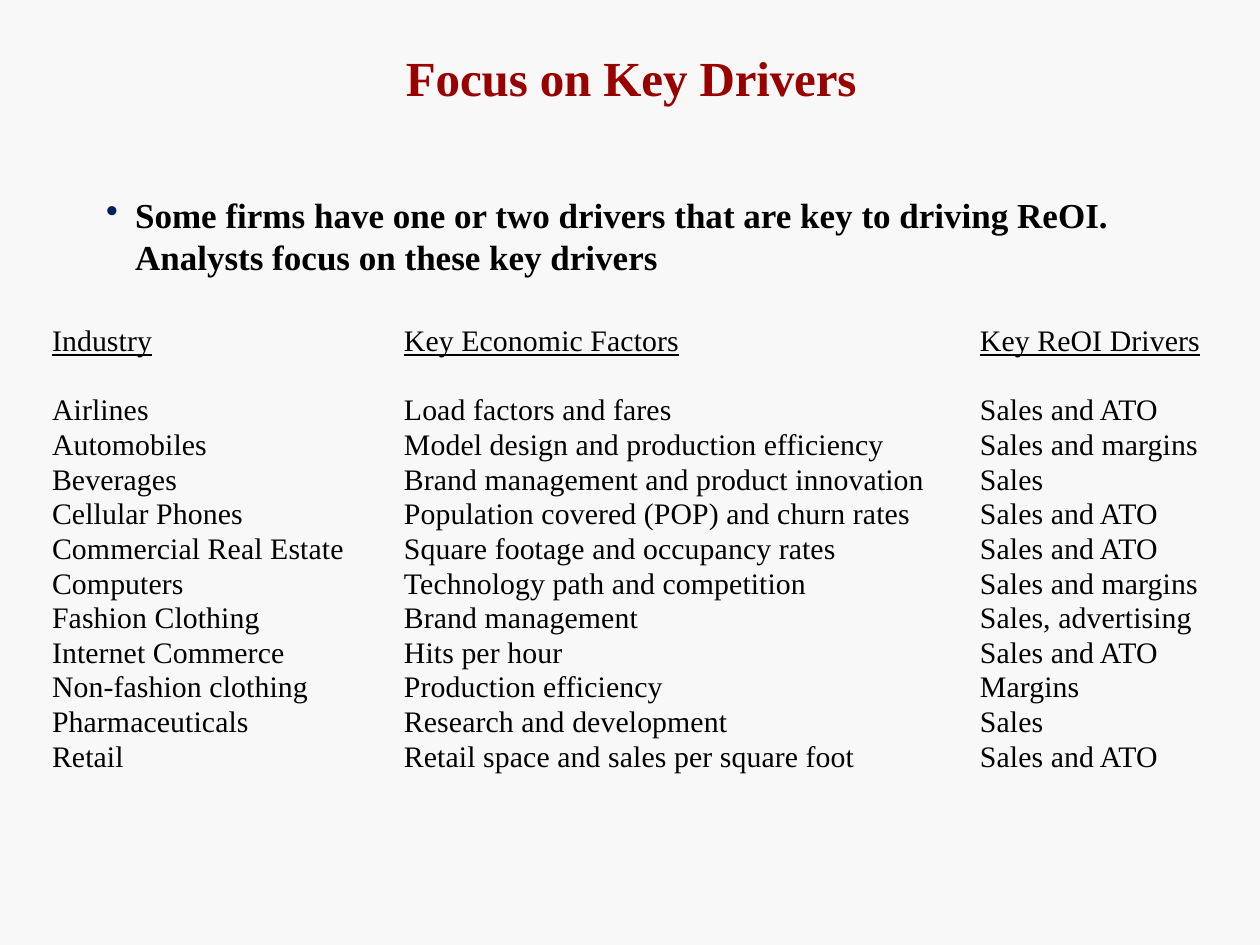
"""Build the slide on key drivers by industry."""
from typing import NamedTuple

from lxml.etree import SubElement
from pptx import Presentation
from pptx.dml.color import RGBColor
from pptx.oxml.ns import qn
from pptx.util import Emu, Pt

EMU_PER_PX = 914400 / 126
FONT = "Times New Roman"
PAPER = RGBColor(0xF8, 0xF8, 0xF8)
RED = RGBColor(0x99, 0x00, 0x00)
BLACK = RGBColor(0x00, 0x00, 0x00)
NAVY = RGBColor(0x00, 0x1F, 0x5F)
NO_GRID_STYLE = "{2D5ABB26-0587-4C30-8999-92F81FD0307C}"


class Box(NamedTuple):
    left: int
    top: int
    width: int
    height: int


class TextStyle(NamedTuple):
    size: int
    color: RGBColor
    bold: bool = False
    underline: bool = False
    spacing: int = 0


class Row(NamedTuple):
    industry: str
    factors: str
    drivers: str


TITLE_STYLE = TextStyle(28, RED, bold=True, spacing=-5)
POINT_STYLE = TextStyle(20, BLACK, bold=True)
HEADER_STYLE = TextStyle(17, BLACK, underline=True, spacing=5)
BODY_STYLE = TextStyle(17, BLACK, spacing=5)

ROWS = [
    Row("Industry", "Key Economic Factors", "Key ReOI Drivers"),
    Row("Airlines", "Load factors and fares", "Sales and ATO"),
    Row("Automobiles", "Model design and production efficiency", "Sales and margins"),
    Row("Beverages", "Brand management and product innovation", "Sales"),
    Row("Cellular Phones", "Population covered (POP) and churn rates", "Sales and ATO"),
    Row("Commercial Real Estate", "Square footage and occupancy rates", "Sales and ATO"),
    Row("Computers", "Technology path and competition", "Sales and margins"),
    Row("Fashion Clothing", "Brand management", "Sales, advertising"),
    Row("Internet Commerce", "Hits per hour", "Sales and ATO"),
    Row("Non-fashion clothing", "Production efficiency", "Margins"),
    Row("Pharmaceuticals", "Research and development", "Sales"),
    Row("Retail", "Retail space and sales per square foot", "Sales and ATO"),
]
COLUMN_WIDTHS = [326, 578, 252]
COLUMN_INDENTS = [4, 30, 28]
ROW_HEIGHTS = [52, 52] + [35, 34, 35, 35, 34] * 2


def px(length: int) -> Emu:
    """Turn pixels into EMU."""
    return Emu(round(length * EMU_PER_PX))


def format_paragraph(paragraph, style: TextStyle, left: int = 0, first: int = 0) -> None:
    """Set indents and the font of every run."""
    properties = paragraph._p.get_or_add_pPr()
    properties.set("marL", str(px(left)))
    properties.set("indent", str(px(first)))
    for run in paragraph.runs:
        font = run.font
        font.name, font.size = FONT, Pt(style.size)
        font.bold, font.underline = style.bold, style.underline
        font.color.rgb = style.color
        run._r.get_or_add_rPr().set("spc", str(style.spacing))


def add_bullet(paragraph) -> None:
    """Give a paragraph a navy round bullet."""
    properties = paragraph._p.get_or_add_pPr()
    color = SubElement(properties, qn("a:buClr"))
    SubElement(color, qn("a:srgbClr"), val=str(NAVY))
    SubElement(properties, qn("a:buChar"), char="•")


def add_text(slide, box: Box, text: str, style: TextStyle):
    """Add a wrapped text box and return its text frame."""
    frame = slide.shapes.add_textbox(*map(px, box)).text_frame
    frame.word_wrap = True
    frame.margin_left = frame.margin_right = frame.margin_bottom = 0
    frame.margin_top = px(1)
    frame.text = text
    for paragraph in frame.paragraphs:
        format_paragraph(paragraph, style)
    return frame


def add_drivers_table(slide, box: Box) -> None:
    """Add the plain table of industries."""
    graphic = slide.shapes.add_table(len(ROWS), len(COLUMN_WIDTHS), *map(px, box))
    table = graphic.table
    table.first_row = table.horz_banding = False
    table._tbl.tblPr.find(qn("a:tableStyleId")).text = NO_GRID_STYLE
    for column, width in zip(table.columns, COLUMN_WIDTHS):
        column.width = px(width)
    for index, (row, height) in enumerate(zip(ROWS, ROW_HEIGHTS)):
        table.rows[index].height = px(height)
        for cell, text, indent in zip(table.rows[index].cells, row, COLUMN_INDENTS):
            cell.fill.solid()
            cell.fill.fore_color.rgb = PAPER
            cell.margin_left = cell.margin_right = cell.margin_bottom = 0
            cell.margin_top = px(15 if index == 1 else 0)
            cell.text = text
            paragraph = cell.text_frame.paragraphs[0]
            paragraph.line_spacing = Pt(20.1 if index == 1 else 18.8)
            format_paragraph(paragraph, BODY_STYLE if index else HEADER_STYLE, indent)


def main() -> None:
    """Create and save the presentation."""
    presentation = Presentation()
    presentation.slide_width, presentation.slide_height = px(1260), px(945)
    slide = presentation.slides.add_slide(presentation.slide_layouts[6])
    slide.background.fill.solid()
    slide.background.fill.fore_color.rgb = PAPER

    add_text(slide, Box(406, 47, 456, 62), "Focus on Key Drivers", TITLE_STYLE)
    points = add_text(
        slide,
        Box(105, 193, 1004, 88),
        "Some firms have one or two drivers that are key to driving ReOI.\n"
        "Analysts focus on these key drivers",
        POINT_STYLE,
    )
    lead, follow = points.paragraphs
    format_paragraph(lead, POINT_STYLE, 30, -29)
    add_bullet(lead)
    format_paragraph(follow, POINT_STYLE, 30)
    add_drivers_table(slide, Box(48, 325, sum(COLUMN_WIDTHS), sum(ROW_HEIGHTS)))
    presentation.save("out.pptx")


if __name__ == "__main__":
    main()
